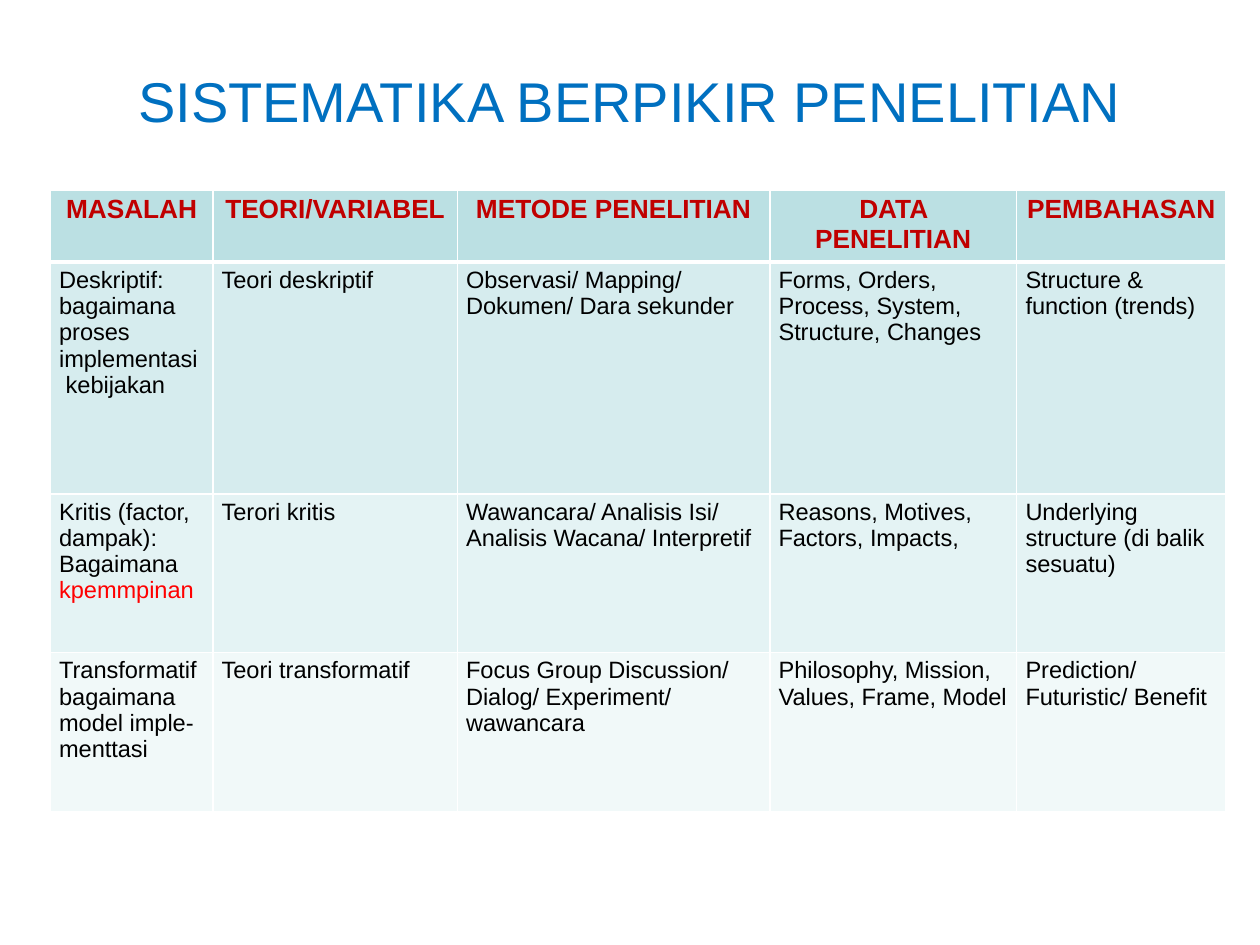
import pptx
import pptx.util
import pptx.dml.color
import pptx.enum.text
import pptx.oxml.ns
import lxml.etree

Inch = pptx.util.Inches
Pt = pptx.util.Pt
Align = pptx.enum.text.PP_ALIGN
qn = pptx.oxml.ns.qn

hues = {
    "title": "0070C0", "head": "C00000", "text": "000000", "mark": "FF0000",
    "line": "FFFFFF", "rows": ["BBE0E3", "D6ECEE", "E4F3F4", "F1F9F9"],
}
cols = [1.29, 1.94, 2.48, 1.96, 1.66]
rows = [0.57, 1.84, 1.26, 1.26]
cells = [
    ["MASALAH", "TEORI/VARIABEL", "METODE PENELITIAN", "DATA PENELITIAN", "PEMBAHASAN"],
    ["Deskriptif: bagaimana proses implementasi  kebijakan", "Teori deskriptif",
     "Observasi/ Mapping/ Dokumen/ Dara sekunder",
     "Forms, Orders, Process, System, Structure, Changes",
     "Structure & function (trends)"],
    ["Kritis (factor, dampak): Bagaimana ", "Terori kritis",
     "Wawancara/ Analisis Isi/ Analisis Wacana/ Interpretif",
     "Reasons, Motives, Factors, Impacts,",
     "Underlying structure (di balik sesuatu)"],
    ["Transformatifbagaimana model imple-menttasi", "Teori transformatif",
     "Focus Group Discussion/ Dialog/ Experiment/ wawancara",
     "Philosophy, Mission, Values, Frame, Model",
     "Prediction/ Futuristic/ Benefit"],
]


def style(run, size, hue, bold=False):
    run.font.name = "Arial"
    run.font.size = Pt(size)
    run.font.bold = bold
    run.font.color.rgb = pptx.dml.color.RGBColor.from_string(hue)


def edge(cell, side, width, at):
    line = lxml.etree.Element(qn("a:ln" + side), w=str(Pt(width)))
    fill = lxml.etree.SubElement(line, qn("a:solidFill"))
    lxml.etree.SubElement(fill, qn("a:srgbClr"), val=hues["line"])
    cell._tc.get_or_add_tcPr().insert(at, line)


deck = pptx.Presentation()
deck.slide_width, deck.slide_height = Inch(10), Inch(7.5)
slide = deck.slides.add_slide(deck.slide_layouts[5])

title = slide.shapes.title
title.left, title.top, title.width, title.height = map(Inch, (0.69, 0.25, 8.62, 1.09))
title.text_frame.text = "SISTEMATIKA BERPIKIR PENELITIAN"
title.text_frame.vertical_anchor = pptx.enum.text.MSO_ANCHOR.MIDDLE
title.text_frame.paragraphs[0].alignment = Align.CENTER
style(title.text_frame.paragraphs[0].runs[0], 32, hues["title"])

table = slide.shapes.add_table(
    len(rows), len(cols), Inch(0.4), Inch(1.51), Inch(sum(cols)), Inch(sum(rows))
).table
for col, width in zip(table.columns, cols):
    col.width = Inch(width)
for row, height in zip(table.rows, rows):
    row.height = Inch(height)

for r, words in enumerate(cells):
    for c, word in enumerate(words):
        cell = table.cell(r, c)
        cell.margin_left = cell.margin_right = Inch(0.07)
        cell.margin_top = cell.margin_bottom = Inch(0.04)
        cell.fill.solid()
        cell.fill.fore_color.rgb = pptx.dml.color.RGBColor.from_string(hues["rows"][r])
        for at, side in enumerate("LRTB"):
            thick = (r, side) in [(0, "B"), (1, "T")]
            edge(cell, side, 3 if thick else 1, at)
        para = cell.text_frame.paragraphs[0]
        para.text = word
        para.alignment = Align.LEFT if r else Align.CENTER
        if r:
            style(para.runs[0], 13.5, hues["text"])
        else:
            style(para.runs[0], 15, hues["head"], True)

mark = table.cell(2, 0).text_frame.paragraphs[0].add_run()
mark.text = "kpemmpinan"
style(mark, 13.5, hues["mark"])

deck.save("out.pptx")
